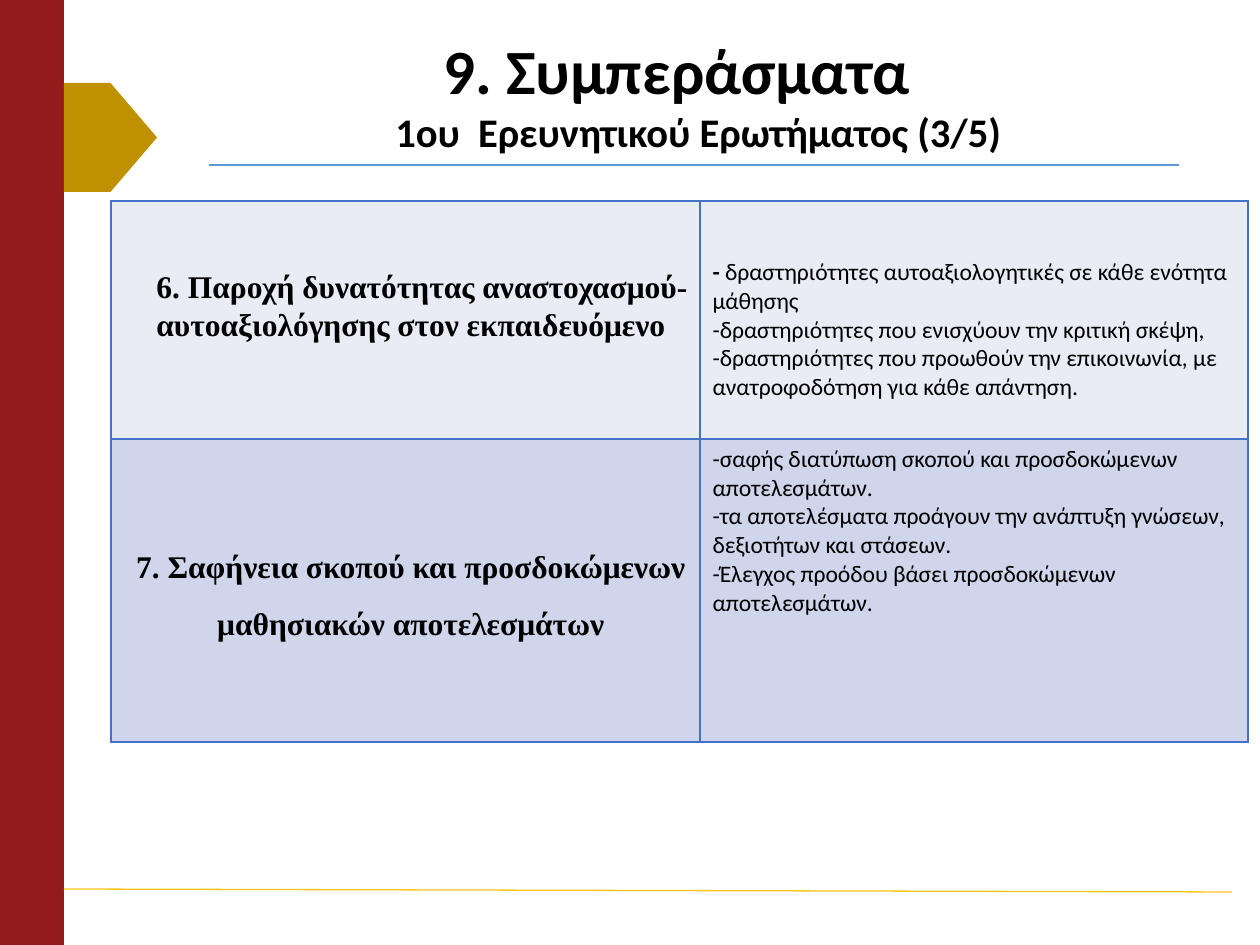
"""Builds the conclusions slide for the first research question."""
import lxml.etree
import pptx
import pptx.dml.color
import pptx.enum.shapes
import pptx.enum.text
import pptx.oxml.ns
import pptx.util

RED = pptx.dml.color.RGBColor(0x93, 0x1B, 0x1B)
GOLD = pptx.dml.color.RGBColor(0xBF, 0x90, 0x00)
YELLOW = pptx.dml.color.RGBColor(0xFF, 0xC6, 0x1A)
BLUE = pptx.dml.color.RGBColor(0x5B, 0x9B, 0xD5)
BORDER = pptx.dml.color.RGBColor(0x44, 0x72, 0xC4)
LIGHT = pptx.dml.color.RGBColor(0xE9, 0xEB, 0xF5)
DARK = pptx.dml.color.RGBColor(0xCF, 0xD5, 0xEA)
BLACK = pptx.dml.color.RGBColor(0x00, 0x00, 0x00)

CENTER = pptx.enum.text.PP_ALIGN.CENTER
SHAPES = pptx.enum.shapes.MSO_SHAPE
BODY_FONT = "Calibri"
HEADING_FONT = "Times New Roman"

SELF_ASSESSMENT = [
    "- δραστηριότητες αυτοαξιολογητικές σε κάθε ενότητα μάθησης",
    "-δραστηριότητες που ενισχύουν την κριτική σκέψη,",
    "-δραστηριότητες που προωθούν την επικοινωνία, με ανατροφοδότηση για κάθε απάντηση.",
]
CLEAR_GOALS = [
    "-σαφής διατύπωση σκοπού και προσδοκώμενων αποτελεσμάτων.",
    "-τα αποτελέσματα προάγουν την ανάπτυξη γνώσεων, δεξιοτήτων και στάσεων.",
    "-Έλεγχος προόδου βάσει προσδοκώμενων αποτελεσμάτων.",
]


def px(length):
    """Converts px to EMU."""
    return pptx.util.Emu(round(length * 914400 / 126))


class SlideBuilder:
    """Holds the current slide and draws styled elements on it."""

    def __init__(self, slide):
        self.slide = slide

    def shape(self, kind, left, top, width, height, color):
        """Adds a filled shape without outline."""
        shape = self.slide.shapes.add_shape(kind, px(left), px(top), px(width), px(height))
        shape.shadow.inherit = False
        shape.fill.solid()
        shape.fill.fore_color.rgb = color
        shape.line.fill.background()

    def line(self, left, top, right, bottom, color):
        """Adds a thin rule."""
        connector = self.slide.shapes.add_connector(
            pptx.enum.shapes.MSO_CONNECTOR.STRAIGHT, px(left), px(top), px(right), px(bottom))
        connector.line.color.rgb = color
        connector.line.width = pptx.util.Pt(0.75)
        lxml.etree.SubElement(connector._element.spPr, pptx.oxml.ns.qn("a:effectLst"))

    def style(self, paragraph, font, size, bold=False):
        """Sets the font of a paragraph."""
        paragraph.font.name = font
        paragraph.font.size = pptx.util.Pt(size)
        paragraph.font.bold = bold
        paragraph.font.color.rgb = BLACK

    def text(self, left, top, width, height, lines, font, sizes):
        """Adds a bold text box and returns its paragraphs."""
        box = self.slide.shapes.add_textbox(px(left), px(top), px(width), px(height))
        frame = box.text_frame
        frame.word_wrap = True
        frame.text = "\n".join(lines)
        for paragraph, size in zip(frame.paragraphs, sizes):
            self.style(paragraph, font, size, bold=True)
        return frame

    def title(self, left, top, width, height, heading, subtitle):
        """Adds the title with its raised subtitle."""
        frame = self.text(left, top, width, height, [heading, subtitle], BODY_FONT, [36, 40])
        frame.vertical_anchor = pptx.enum.text.MSO_ANCHOR.MIDDLE
        for paragraph in frame.paragraphs:
            paragraph.alignment = CENTER
            paragraph.line_spacing = 0.9
        raised = frame.paragraphs[1]
        raised.runs[0]._r.get_or_add_rPr().set("baseline", "30000")
        raised._p.get_or_add_pPr().set("marL", str(px(44)))

    def border(self, cell):
        """Draws all four borders of a cell."""
        properties = cell._tc.get_or_add_tcPr()
        for position, side in enumerate(("lnL", "lnR", "lnT", "lnB")):
            edge = pptx.oxml.parse_xml(
                f'<a:{side} {pptx.oxml.ns.nsdecls("a")} w="12700">'
                f'<a:solidFill><a:srgbClr val="{BORDER}"/></a:solidFill></a:{side}>')
            properties.insert(position, edge)

    def table(self, left, top, widths, heights, rows):
        """Adds a table whose rows are fill, top margin and right-hand lines."""
        table = self.slide.shapes.add_table(
            len(heights), len(widths), px(left), px(top), px(sum(widths)), px(sum(heights))).table
        table.first_row = False
        table.horz_banding = False
        for column, width in zip(table.columns, widths):
            column.width = px(width)
        for row, height, (color, margin, lines) in zip(table.rows, heights, rows):
            row.height = px(height)
            for cell in row.cells:
                cell.fill.solid()
                cell.fill.fore_color.rgb = color
                self.border(cell)
            cell = row.cells[1]
            cell.margin_top = px(margin)
            cell.text = "\n".join(lines)
            for paragraph in cell.text_frame.paragraphs:
                self.style(paragraph, BODY_FONT, 13.5)
        dash = table.cell(0, 1).text_frame.paragraphs[0]
        first, rest = dash.runs[0], dash.add_run()
        first.text, rest.text = first.text[:1], first.text[1:]
        first.font.bold = True


def main():
    """Builds and saves the slide."""
    presentation = pptx.Presentation()
    presentation.slide_width = px(1260)
    presentation.slide_height = px(945)
    builder = SlideBuilder(presentation.slides.add_slide(presentation.slide_layouts[6]))

    builder.shape(SHAPES.RECTANGLE, 0, 0, 64, 945, RED)
    builder.line(209, 165, 1179, 165, BLUE)
    builder.line(64, 889, 1232, 892, YELLOW)
    builder.shape(SHAPES.PENTAGON, 64, 83, 93, 109, GOLD)
    builder.title(141, 50, 1071, 124, "9. Συμπεράσματα", "1ου  Ερευνητικού Ερωτήματος (3/5)")
    builder.table(111, 201, [589, 548], [238, 303],
                  [(LIGHT, 57, SELF_ASSESSMENT), (DARK, 6, CLEAR_GOALS)])
    builder.text(144, 261, 625, 89,
                 ["6. Παροχή δυνατότητας αναστοχασμού- αυτοαξιολόγησης στον εκπαιδευόμενο"],
                 HEADING_FONT, [18])
    goals = builder.text(115, 522, 592, 193,
                         ["7. Σαφήνεια σκοπού και προσδοκώμενων μαθησιακών αποτελεσμάτων"],
                         HEADING_FONT, [18]).paragraphs[0]
    goals.alignment = CENTER
    goals.line_spacing = 1.5
    goals.space_after = pptx.util.Pt(8)
    presentation.save("out.pptx")


if __name__ == "__main__":
    main()
